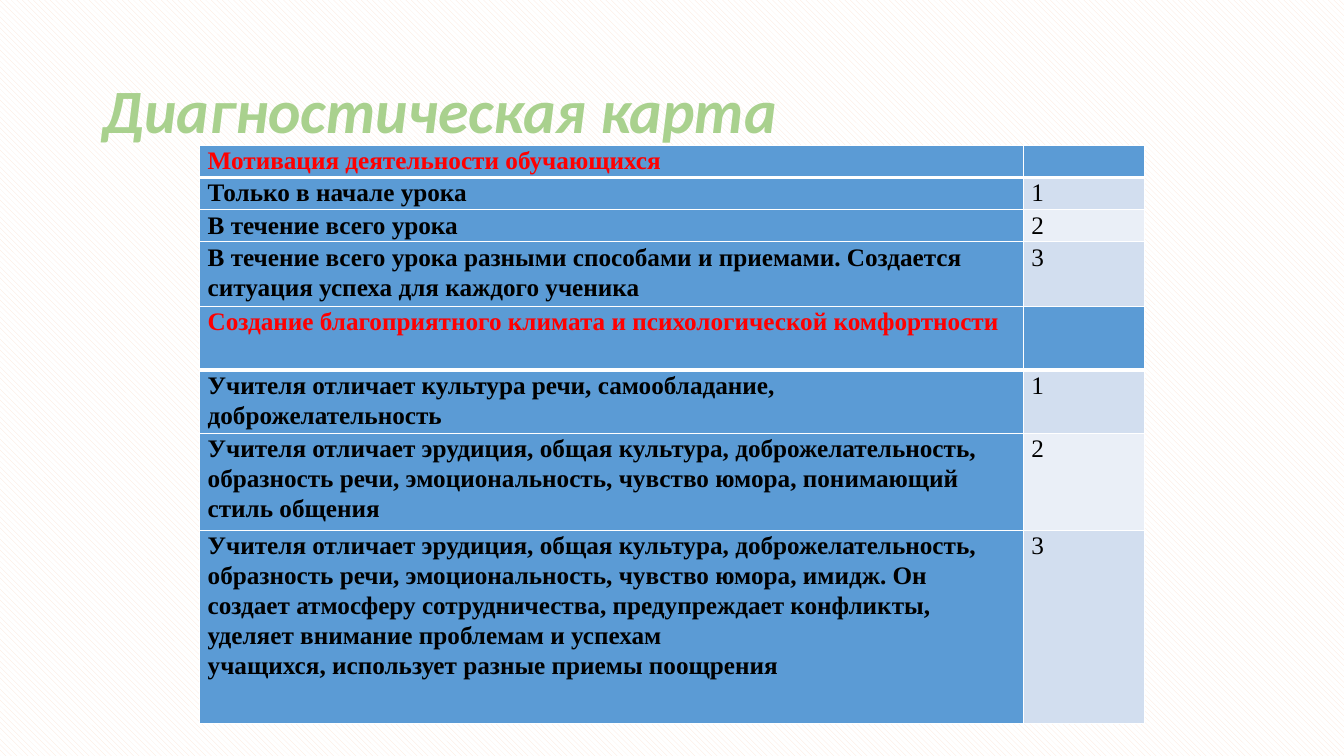
import pptx
import pptx.util
import pptx.dml.color
import pptx.enum.dml
import pptx.enum.text
import pptx.oxml
import pptx.oxml.ns
from pptx.util import Inches

COLORS = {
    "title": "A9D18E", "heading": "FF0000", "text": "000000", "label": "5B9BD5",
    "odd": "D2DEEF", "even": "EAEFF7", "border": "FFFFFF", "hatch": "FBE5D6",
}
COLUMN_WIDTHS = (8.17, 1.2)
MOTIVATION = (
    "Мотивация деятельности обучающихся",
    "Только в начале урока",
    "В течение всего урока",
    "В течение всего урока разными способами и приемами. Создается ситуация успеха для каждого ученика",
)
CLIMATE = (
    "Создание благоприятного климата и психологической комфортности",
    "Учителя отличает культура речи, самообладание, доброжелательность",
    "Учителя отличает эрудиция, общая культура, доброжелательность, образность речи, "
    "эмоциональность, чувство юмора, понимающий стиль общения",
    "Учителя отличает эрудиция, общая культура, доброжелательность, образность речи, "
    "эмоциональность, чувство юмора, имидж. Он создает атмосферу сотрудничества, "
    "предупреждает конфликты, уделяет внимание проблемам и успехам\n"
    "учащихся, использует разные приемы поощрения",
)


def color(name):
    """Return the named palette colour."""
    return pptx.dml.color.RGBColor.from_string(COLORS[name])


def format_font(font, face, size, name, bold, italic=False):
    """Apply face, size, colour and weight to a font."""
    font.name, font.size = face, pptx.util.Pt(size)
    font.bold, font.italic = bold, italic
    font.color.rgb = color(name)


def add_borders(cell, top, bottom):
    """Draw the cell's borders, with the given top and bottom widths in points."""
    properties = cell._tc.get_or_add_tcPr()
    for side, points in (("L", 1), ("R", 1), ("T", top), ("B", bottom)):
        properties.append(pptx.oxml.parse_xml(
            f'<a:ln{side} {pptx.oxml.ns.nsdecls("a")} w="{pptx.util.Pt(points)}">'
            f'<a:solidFill><a:srgbClr val="{COLORS["border"]}"/></a:solidFill></a:ln{side}>'))


def fill_cell(cell, text, fill, font_color, bold):
    """Write one table cell with its fill, insets and text format."""
    cell.fill.solid()
    cell.fill.fore_color.rgb = color(fill)
    cell.margin_left = cell.margin_right = Inches(0.08)
    cell.margin_top = cell.margin_bottom = 0
    cell.text_frame.text = text
    for para in cell.text_frame.paragraphs:
        para.line_spacing = 1.07
        format_font(para.font, "Times New Roman", 18, font_color, bold)
        for span in para.runs:
            format_font(span.font, "Times New Roman", 18, font_color, bold)


def add_criterion(page, left, top, labels, heights):
    """Add a criterion table: a red heading and levels scored from one."""
    table = page.shapes.add_table(
        len(labels), 2, Inches(left), Inches(top),
        Inches(sum(COLUMN_WIDTHS)), Inches(sum(heights))).table
    for column, width in zip(table.columns, COLUMN_WIDTHS):
        column.width = Inches(width)
    for score, (label, height) in enumerate(zip(labels, heights)):
        table.rows[score].height = Inches(height)
        heading = score == 0
        for cell in table.rows[score].cells:
            add_borders(cell, 3 if score == 1 else 1, 3 if heading else 1)
        label_cell, score_cell = table.rows[score].cells
        fill_cell(label_cell, label, "label", "heading" if heading else "text", True)
        score_fill = "label" if heading else "odd" if score % 2 else "even"
        fill_cell(score_cell, "" if heading else str(score), score_fill, "text", False)


def add_title(page, left, top, width, height):
    """Place and format the slide title."""
    title = page.shapes.title
    title.left, title.top = Inches(left), Inches(top)
    title.width, title.height = Inches(width), Inches(height)
    frame = title.text_frame
    frame.text = "Диагностическая карта"
    frame.vertical_anchor = pptx.enum.text.MSO_ANCHOR.MIDDLE
    para = frame.paragraphs[0]
    para.alignment = pptx.enum.text.PP_ALIGN.LEFT
    para.line_spacing = 0.9
    format_font(para.runs[0].font, "Calibri", 44, "title", True, True)


def add_background(page):
    """Fill the slide with a pale diagonal hatch."""
    fill = page.background.fill
    fill.patterned()
    fill.pattern = pptx.enum.dml.MSO_PATTERN.WIDE_DOWNWARD_DIAGONAL
    fill.fore_color.rgb = color("hatch")
    fill.back_color.rgb = color("border")


def main():
    """Build and save the deck."""
    deck = pptx.Presentation()
    deck.slide_width, deck.slide_height = Inches(13.33), Inches(7.5)
    page = deck.slides.add_slide(deck.slide_layouts.get_by_name("Title Only"))
    add_background(page)
    add_title(page, 0.92, 0.4, 11.5, 1.45)
    add_criterion(page, 1.98, 3.04, CLIMATE, (0.63, 0.63, 0.96, 1.92))
    add_criterion(page, 1.98, 1.44, MOTIVATION, (0.32, 0.32, 0.32, 0.64))
    deck.save("out.pptx")


if __name__ == "__main__":
    main()
